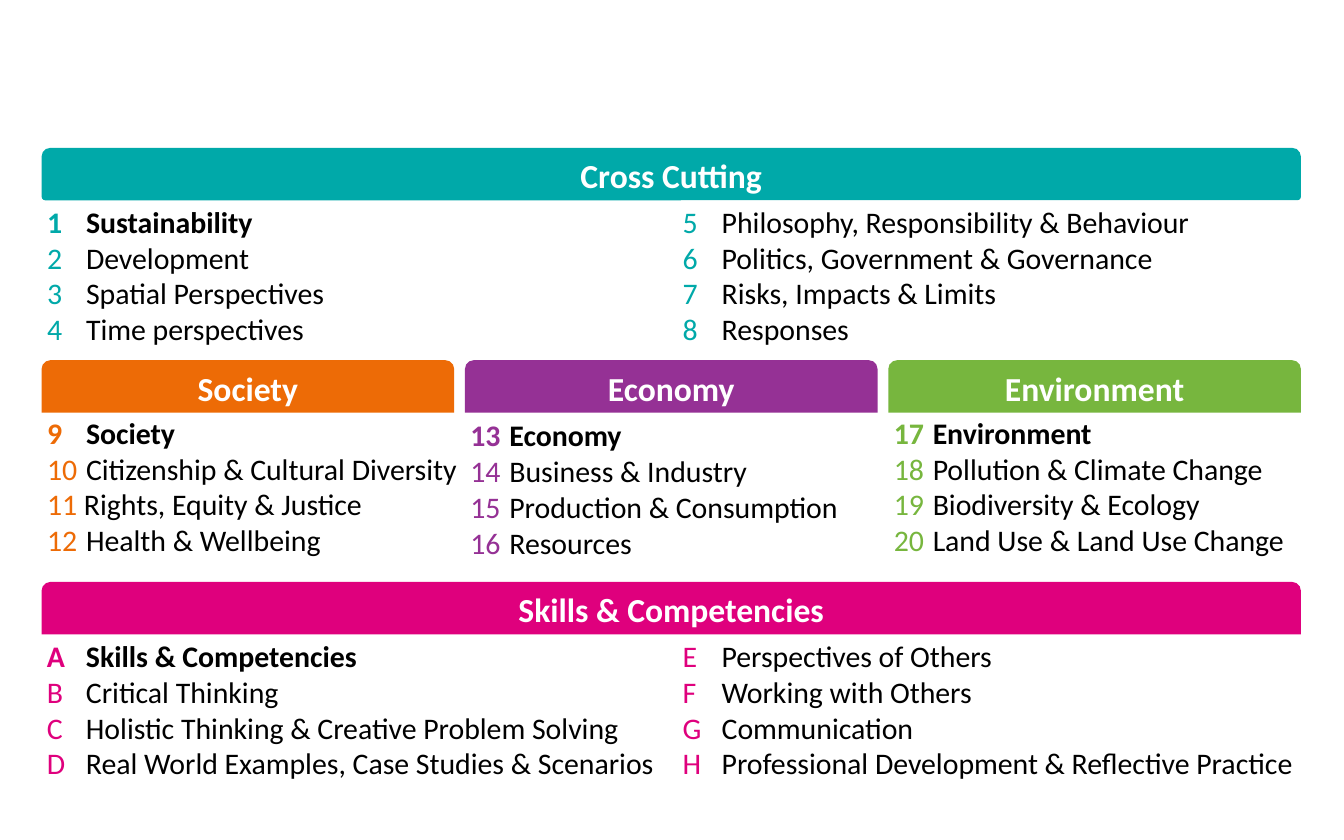
from pptx import Presentation
from pptx.dml.color import RGBColor
from pptx.enum.shapes import MSO_SHAPE
from pptx.enum.text import MSO_ANCHOR, MSO_AUTO_SIZE, PP_ALIGN
from pptx.util import Inches, Pt

HEADER_SHAPE = MSO_SHAPE.ROUND_2_SAME_RECTANGLE
LIST_SHAPE = MSO_SHAPE.ROUNDED_RECTANGLE
GROW = MSO_AUTO_SIZE.SHAPE_TO_FIT_TEXT
BOTTOM = MSO_ANCHOR.BOTTOM
MIDDLE = MSO_ANCHOR.MIDDLE
CENTER = PP_ALIGN.CENTER
ALIGN_LEFT = PP_ALIGN.LEFT

COLORS = {
    "cross": "00A9A9",
    "society": "ED6B06",
    "economy": "953195",
    "environment": "77B63E",
    "skills": "DF007D",
    "text": "000000",
    "header": "FFFFFF",
}
HEADER_FONT = {"name": "Calibri", "size": Pt(18), "bold": True}
ITEM_FONT = {"name": "Calibri", "size": Pt(16)}
LIST_FRAME = {
    "margin_left": 0,
    "margin_right": 0,
    "margin_top": 0,
    "margin_bottom": 0,
    "word_wrap": True,
    "auto_size": GROW,
}

LEFT = 0.31
FULL_WIDTH = 9.37
THIRD_WIDTH = 3.07
THIRD_STEP = 3.15
HEADER_HEIGHT = 0.39
LIST_HEIGHT = 1.08
LIST_LEFT = 0.35
RIGHT_LIST_LEFT = 5.08
INDENT = 0.29
CROSS_TOP, THEMES_TOP, SKILLS_TOP = 1.1, 2.68, 4.33

CROSS_LEFT = [
    ("1", "Sustainability"),
    ("2", "Development"),
    ("3", "Spatial Perspectives"),
    ("4", "Time perspectives"),
]
CROSS_RIGHT = [
    ("5", "Philosophy, Responsibility & Behaviour"),
    ("6", "Politics, Government & Governance"),
    ("7", "Risks, Impacts & Limits"),
    ("8", "Responses"),
]
SOCIETY = [
    ("9", "Society"),
    ("10", "Citizenship & Cultural Diversity"),
    ("11", "Rights, Equity & Justice"),
    ("12", "Health & Wellbeing"),
]
ECONOMY = [
    ("13", "Economy"),
    ("14", "Business & Industry"),
    ("15", "Production & Consumption"),
    ("16", "Resources"),
]
ENVIRONMENT = [
    ("17", "Environment"),
    ("18", "Pollution & Climate Change"),
    ("19", "Biodiversity & Ecology"),
    ("20", "Land Use & Land Use Change"),
]
SKILLS_LEFT = [
    ("A", "Skills & Competencies"),
    ("B", "Critical Thinking"),
    ("C", "Holistic Thinking & Creative Problem Solving"),
    ("D", "Real World Examples, Case Studies & Scenarios"),
]
SKILLS_RIGHT = [
    ("E", "Perspectives of Others"),
    ("F", "Working with Others"),
    ("G", "Communication"),
    ("H", "Professional Development & Reflective Practice"),
]
THEMES = [
    ("Society", "society", SOCIETY, 3.08, LIST_HEIGHT, BOTTOM),
    ("Economy", "economy", ECONOMY, 3.01, 1.13, MIDDLE),
    ("Environment", "environment", ENVIRONMENT, 2.92, LIST_HEIGHT, BOTTOM),
]


def rgb(color):
    return RGBColor.from_string(COLORS[color])


def apply_format(target, values):
    for name, value in values.items():
        setattr(target, name, value)


def add_run(paragraph, text, color, font_format):
    run = paragraph.add_run()
    run.text = text
    apply_format(run.font, font_format)
    run.font.color.rgb = rgb(color)


def add_plain_shape(slide, kind, left, top, width, height, adjustments):
    shape = slide.shapes.add_shape(
        kind, Inches(left), Inches(top), Inches(width), Inches(height)
    )
    for index, value in enumerate(adjustments):
        shape.adjustments[index] = value
    shape.shadow.inherit = False
    shape.fill.background()
    shape.line.fill.background()
    return shape


def add_header(slide, text, color, left, top, width, bottom_rounding=0):
    shape = add_plain_shape(slide, HEADER_SHAPE, left, top, width,
                            HEADER_HEIGHT, [0.167, bottom_rounding])
    shape.fill.solid()
    shape.fill.fore_color.rgb = rgb(color)
    shape.text_frame.vertical_anchor = MIDDLE
    paragraph = shape.text_frame.paragraphs[0]
    paragraph.alignment = CENTER
    add_run(paragraph, text, "header", HEADER_FONT)


def add_list(slide, items, color, left, top, width,
             height=LIST_HEIGHT, anchor=BOTTOM, has_lead=True):
    shape = add_plain_shape(slide, LIST_SHAPE, left, top, width, height, [0])
    frame = shape.text_frame
    apply_format(frame, {**LIST_FRAME, "vertical_anchor": anchor})
    for index, (code, label) in enumerate(items):
        paragraph = frame.add_paragraph() if index else frame.paragraphs[0]
        paragraph.alignment = ALIGN_LEFT
        properties = paragraph._p.get_or_add_pPr()
        properties.set("marL", str(Inches(INDENT)))
        properties.set("indent", str(-Inches(INDENT)))
        font_format = {**ITEM_FONT, "bold": has_lead and index == 0}
        separator = " " if code == "11" else "\t"
        add_run(paragraph, code + separator, color, font_format)
        add_run(paragraph, label, "text", font_format)


def add_themes(slide):
    for column, (title, color, items, width, height, anchor) in enumerate(THEMES):
        offset = column * THIRD_STEP
        add_header(slide, title, color, LEFT + offset, THEMES_TOP, THIRD_WIDTH)
        add_list(slide, items, color, LIST_LEFT + offset,
                 THEMES_TOP + HEADER_HEIGHT, width, height, anchor)


def main():
    presentation = Presentation()
    presentation.slide_width = Inches(10)
    presentation.slide_height = Inches(6.25)
    slide = presentation.slides.add_slide(presentation.slide_layouts[6])

    add_header(slide, "Cross Cutting", "cross", LEFT, CROSS_TOP, FULL_WIDTH, 0.07)
    add_list(slide, CROSS_LEFT, "cross", LIST_LEFT, 1.5, 2.39)
    add_list(slide, CROSS_RIGHT, "cross", RIGHT_LIST_LEFT, 1.5, 3.82, has_lead=False)
    add_themes(slide)
    add_header(slide, "Skills & Competencies", "skills", LEFT, SKILLS_TOP, FULL_WIDTH)
    add_list(slide, SKILLS_LEFT, "skills", LIST_LEFT, 4.72, 4.83, 1.09)
    add_list(slide, SKILLS_RIGHT, "skills", RIGHT_LIST_LEFT, 4.72, 4.83, 1.09,
             has_lead=False)

    presentation.save("out.pptx")


if __name__ == "__main__":
    main()
